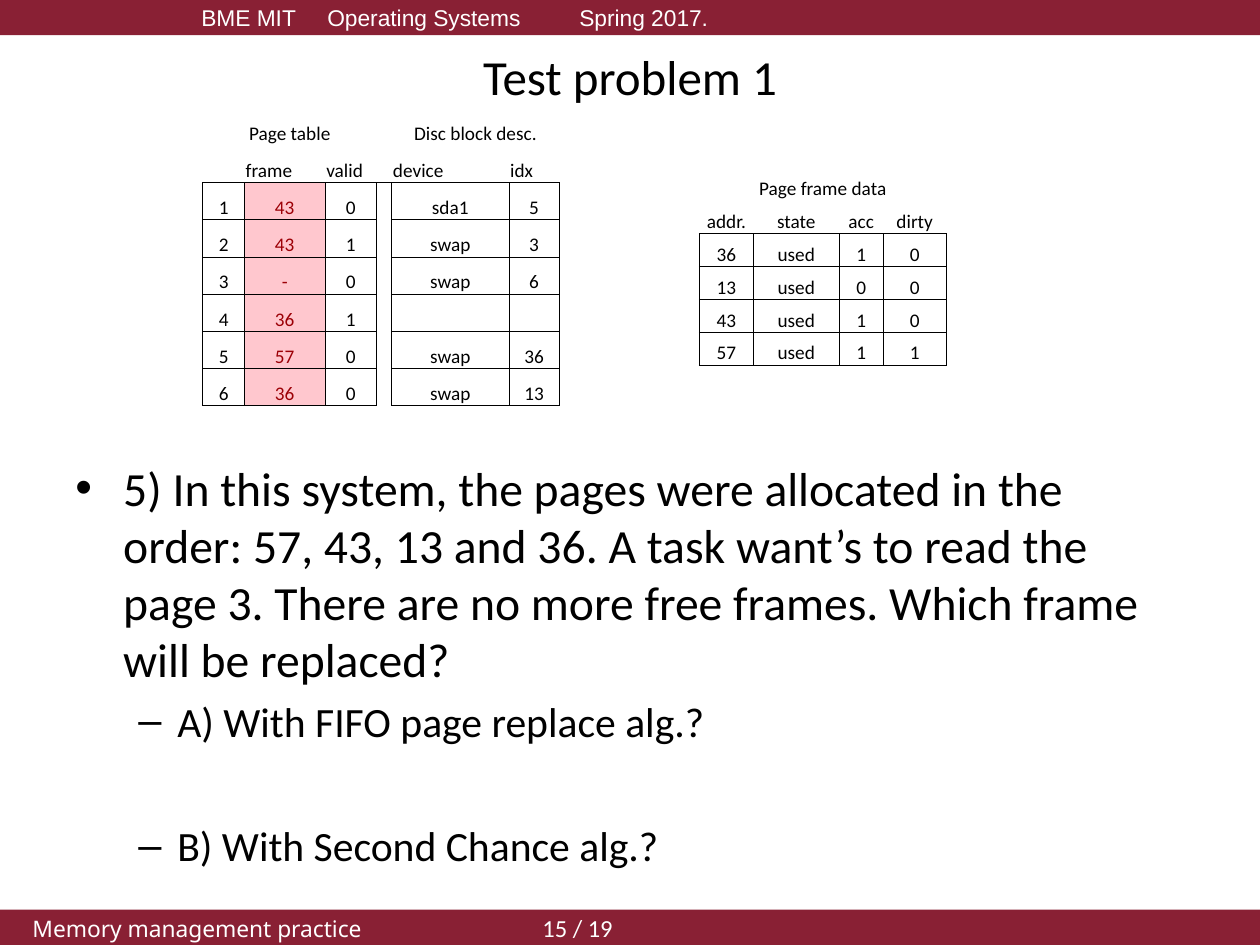
"""Build the page replacement test problem slide."""
from lxml.etree import SubElement
from pptx import Presentation
from pptx.dml.color import RGBColor
from pptx.enum.shapes import MSO_SHAPE as Shape
from pptx.enum.text import MSO_ANCHOR as Anchor, PP_ALIGN as Align
from pptx.oxml.ns import qn
from pptx.util import Inches, Pt

MAROON = RGBColor(0x89, 0x20, 0x34)
WHITE = RGBColor(0xFF, 0xFF, 0xFF)
BLACK = RGBColor(0, 0, 0)
PINK = RGBColor(0xFF, 0xC7, 0xCE)
DARK_RED = RGBColor(0x9C, 0x00, 0x06)
NO_STYLE = "{2D5ABB26-0587-4C30-8999-92F81FD0307C}"


def style(span, size, color, name="Calibri"):
    span.font.size = Pt(size)
    span.font.color.rgb = color
    span.font.name = name


def add_grid(page, left, top, height, widths, rows, merges, gap=None, red=None, left_row=None):
    frame = page.shapes.add_table(len(rows), len(widths), Inches(left), Inches(top),
                                  Inches(sum(widths)), Inches(height))
    table = frame.table
    table.first_row = table.horz_banding = False
    table._tbl.tblPr.find(qn("a:tableStyleId")).text = NO_STYLE
    for column, width in zip(table.columns, widths):
        column.width = Inches(width)
    for r, values in enumerate(rows):
        for c, value in enumerate(values):
            cell = table.cell(r, c)
            cell.margin_left = cell.margin_right = cell.margin_top = Inches(0.01)
            cell.margin_bottom = 0
            cell.vertical_anchor = Anchor.BOTTOM
            cell.text_frame.text = value
            para = cell.text_frame.paragraphs[0]
            para.alignment = Align.LEFT if r == left_row else Align.CENTER
            marked = r > 1 and c == red
            for span in para.runs:
                style(span, 11, DARK_RED if marked else BLACK)
            if not value:
                SubElement(para._p, qn("a:endParaRPr"), sz="1100")
            sides = "" if r == 0 else "B" if r == 1 else "LR" if c == gap else "LRTB"
            if r == 1 and c == gap:
                sides = ""
            for side in sides:
                line = SubElement(cell._tc.get_or_add_tcPr(), qn(f"a:ln{side}"), w=str(Pt(0.5)))
                fill = SubElement(line, qn("a:solidFill"))
                SubElement(fill, qn("a:srgbClr"), val=str(BLACK))
            if marked:
                cell.fill.solid()
                cell.fill.fore_color.rgb = PINK
            else:
                cell.fill.background()
    for row in table.rows:
        row.height = Inches(height / len(rows))
    for r, first, last in merges:
        table.cell(r, first).merge(table.cell(r, last))


deck = Presentation()
deck.slide_width, deck.slide_height = Inches(10), Inches(7.5)
page = deck.slides.add_slide(deck.slide_layouts[6])

bands = [
    (0, 1.5, [("BME MIT\tOperating Systems\tSpring 2017.", 13, "Arial")]),
    (7.22, 0.16, [("Memory management practice\t\t ", 13, "Noto Sans"),
                  ("15 / 19", 14, "Calibri")]),
]
for top, indent, pieces in bands:
    band = page.shapes.add_shape(Shape.RECTANGLE, 0, Inches(top), Inches(10), Inches(0.28))
    band.shadow.inherit = False
    band.fill.solid()
    band.fill.fore_color.rgb = MAROON
    band.line.fill.background()
    band.text_frame.vertical_anchor = Anchor.MIDDLE
    para = band.text_frame.paragraphs[0]
    para.alignment = Align.LEFT
    props = para._p.get_or_add_pPr()
    props.set("marL", str(Inches(indent)))
    props.set("indent", "0")
    props.set("defTabSz", str(Inches(1)))
    for text, size, name in pieces:
        span = para.add_run()
        span.text = text
        style(span, size, WHITE, name)

title = page.shapes.add_textbox(Inches(0.5), Inches(0.3), Inches(9), Inches(0.61))
title.text_frame.word_wrap = True
title.text_frame.vertical_anchor = Anchor.MIDDLE
title.text_frame.text = "Test problem 1"
para = title.text_frame.paragraphs[0]
para.alignment = Align.CENTER
style(para.runs[0], 28, BLACK)

box = page.shapes.add_textbox(Inches(0.5), Inches(3.59), Inches(9), Inches(2.83))
box.text_frame.word_wrap = True
questions = [
    ("5) In this system, the pages were allocated in the order: 57, 43, 13 and 36. "
     "A task want’s to read the page 3. There are no more free frames. "
     "Which frame will be replaced?", 0, 27.2, 0),
    ("A) With FIFO page replace alg.?", 1, 23.8, 4.8),
    ("B) With Second Chance alg.?", 1, 23.8, 42.5),
]
bullets = [("•", 0.38, -0.38), ("–", 0.81, -0.31)]
box.text_frame.text = "\n".join(question[0] for question in questions)
for para, (text, level, size, before) in zip(box.text_frame.paragraphs, questions):
    mark, margin, indent = bullets[level]
    para.level = level
    para.space_before = Pt(before)
    props = para._p.get_or_add_pPr()
    props.set("marL", str(Inches(margin)))
    props.set("indent", str(Inches(indent)))
    SubElement(props, qn("a:buFont"), typeface="Arial")
    SubElement(props, qn("a:buChar"), char=mark)
    style(para.runs[0], size, BLACK)

page_rows = [
    ("Page table", "", "", "", "Disc block desc.", ""),
    ("", "frame", "valid", "", "device", "idx"),
    ("1", "43", "0", "", "sda1", "5"),
    ("2", "43", "1", "", "swap", "3"),
    ("3", "-", "0", "", "swap", "6"),
    ("4", "36", "1", "", "", ""),
    ("5", "57", "0", "", "swap", "36"),
    ("6", "36", "0", "", "swap", "13"),
]
add_grid(page, 1.61, 0.86, 2.36, [0.33, 0.64, 0.41, 0.12, 0.93, 0.4], page_rows,
         [(0, 0, 2), (0, 4, 5), (1, 2, 3)], gap=3, red=1, left_row=1)

frame_rows = [
    ("Page frame data", "", "", ""),
    ("addr.", "state", "acc", "dirty"),
    ("36", "used", "1", "0"),
    ("13", "used", "0", "0"),
    ("43", "used", "1", "0"),
    ("57", "used", "1", "1"),
]
add_grid(page, 5.55, 1.33, 1.57, [0.43, 0.68, 0.35, 0.5], frame_rows, [(0, 0, 3)])

deck.save("out.pptx")
